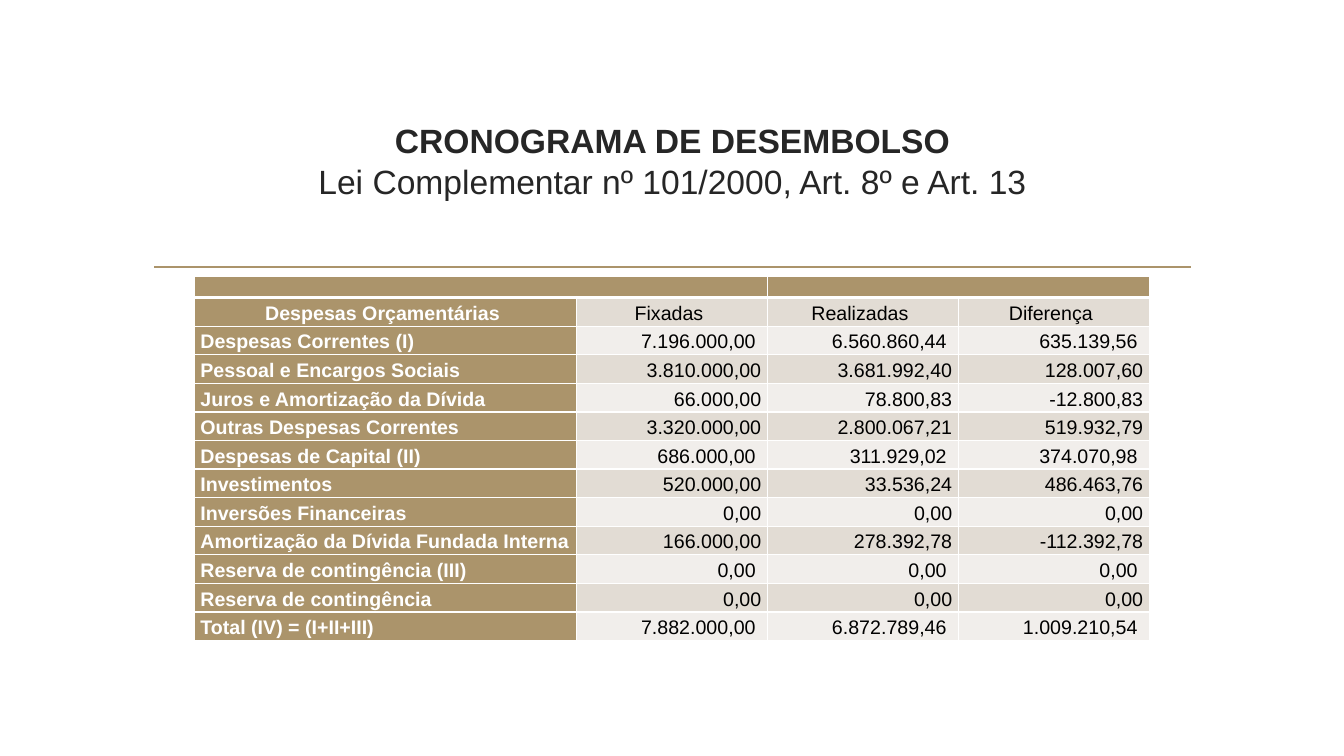
from lxml import etree
from pptx import Presentation
from pptx import util as u
from pptx.dml import color
from pptx.enum import shapes, text
from pptx.oxml import ns

FONT = "Arial"
GOLD, WHITE, BLACK, DARK = "AB946B", "FFFFFF", "000000", "262626"
BANDS = ("E2DCD4", "F1EEEB")
HEADINGS = ("Despesas Orçamentárias", "Fixadas", "Realizadas", "Diferença")
EXPENSES = (
    ("Despesas Correntes (I)", "7.196.000,00", "6.560.860,44", "635.139,56"),
    ("Pessoal e Encargos Sociais", "3.810.000,00", "3.681.992,40", "128.007,60"),
    ("Juros e Amortização da Dívida", "66.000,00", "78.800,83", "-12.800,83"),
    ("Outras Despesas Correntes", "3.320.000,00", "2.800.067,21", "519.932,79"),
    ("Despesas de Capital (II)", "686.000,00", "311.929,02", "374.070,98"),
    ("Investimentos", "520.000,00", "33.536,24", "486.463,76"),
    ("Inversões Financeiras", "0,00", "0,00", "0,00"),
    ("Amortização da Dívida Fundada Interna", "166.000,00", "278.392,78", "-112.392,78"),
    ("Reserva de contingência (III)", "0,00", "0,00", "0,00"),
    ("Reserva de contingência", "0,00", "0,00", "0,00"),
    ("Total (IV) = (I+II+III)", "7.882.000,00", "6.872.789,46", "1.009.210,54"),
)


def rgb(value):
    return color.RGBColor.from_string(value)


def add_run(paragraph, words, size, value, bold=False):
    run = paragraph.add_run()
    run.text = words
    run.font.name = FONT
    run.font.size = u.Pt(size)
    run.font.bold = bold
    run.font.color.rgb = rgb(value)


def add_title(slide, left, top, width, height):
    title = slide.shapes.title
    title.left, title.top = u.Cm(left), u.Cm(top)
    title.width, title.height = u.Cm(width), u.Cm(height)
    frame = title.text_frame
    frame.word_wrap = True
    frame.auto_size = text.MSO_AUTO_SIZE.NONE
    frame.vertical_anchor = text.MSO_ANCHOR.MIDDLE
    frame.margin_bottom = u.Cm(1.1)
    paragraph = frame.paragraphs[0]
    paragraph.alignment = text.PP_ALIGN.CENTER
    add_run(paragraph, "CRONOGRAMA DE DESEMBOLSO", 24, DARK, bold=True)
    paragraph.add_line_break()
    add_run(paragraph, "Lei Complementar nº 101/2000, Art. 8º e Art. 13", 24, DARK)


def add_rule(slide, left, top, width):
    rule = slide.shapes.add_connector(
        shapes.MSO_CONNECTOR.STRAIGHT, u.Cm(left), u.Cm(top), u.Cm(left + width), u.Cm(top))
    rule.line.color.rgb = rgb(GOLD)
    rule.line.width = u.Pt(1.25)
    etree.SubElement(rule._element.spPr, ns.qn("a:effectLst"))


def style_cell(cell, fill, bottom_width=1):
    cell.margin_left = cell.margin_right = u.Cm(0.15)
    cell.margin_top = cell.margin_bottom = u.Cm(0.02)
    cell.vertical_anchor = text.MSO_ANCHOR.MIDDLE
    properties = cell._tc.get_or_add_tcPr()
    # White borders come before the fill
    for side, width in (("L", 1), ("R", 1), ("T", 1), ("B", bottom_width)):
        border = etree.SubElement(properties, ns.qn(f"a:ln{side}"), w=str(u.Pt(width)))
        solid = etree.SubElement(border, ns.qn("a:solidFill"))
        etree.SubElement(solid, ns.qn("a:srgbClr"), val=WHITE)
    cell.fill.solid()
    cell.fill.fore_color.rgb = rgb(fill)


def add_expense_table(slide, left, top, width):
    band_height, row_height = 0.54, 0.72
    rows = (HEADINGS,) + EXPENSES
    frame = slide.shapes.add_table(
        len(rows) + 1, len(HEADINGS), u.Cm(left), u.Cm(top), u.Cm(width),
        u.Cm(band_height + len(rows) * row_height))
    table = frame.table
    for column, share in zip(table.columns, (0.4, 0.2, 0.2, 0.2)):
        column.width = u.Cm(width * share)
    for row in table.rows:
        row.height = u.Cm(row_height)

    # Empty band across the top, in two halves
    table.rows[0].height = u.Cm(band_height)
    for cell in table.rows[0].cells:
        style_cell(cell, GOLD, bottom_width=3)
        etree.SubElement(cell.text_frame.paragraphs[0]._p, ns.qn("a:endParaRPr"), sz="1000")
    for first in (0, 2):
        table.cell(0, first).merge(table.cell(0, first + 1))

    # Headings and figures
    for row_index, values in enumerate(rows):
        is_heading = row_index == 0
        is_total = values[0].endswith(")")
        for column_index, value in enumerate(values):
            is_label = column_index == 0
            cell = table.cell(row_index + 1, column_index)
            style_cell(cell, GOLD if is_label else BANDS[row_index % 2])
            paragraph = cell.text_frame.paragraphs[0]
            paragraph.line_spacing = 1.15
            if is_heading:
                paragraph.alignment = text.PP_ALIGN.CENTER
            elif is_label:
                paragraph.alignment = text.PP_ALIGN.LEFT
            else:
                paragraph.alignment = text.PP_ALIGN.RIGHT
            if is_heading or (is_total and not is_label):
                cell.margin_right = u.Cm(0.29)
            add_run(paragraph, value, 14, WHITE if is_label else BLACK, bold=is_label)


def main():
    presentation = Presentation()
    presentation.slide_width, presentation.slide_height = u.Cm(33.87), u.Cm(19.05)
    slide = presentation.slides.add_slide(presentation.slide_layouts[5])
    add_rule(slide, 3.89, 6.73, 26.12)
    add_title(slide, 3.61, 2.72, 26.67, 3.63)
    add_expense_table(slide, 4.9, 6.96, 24.06)
    presentation.save("out.pptx")


if __name__ == "__main__":
    main()
